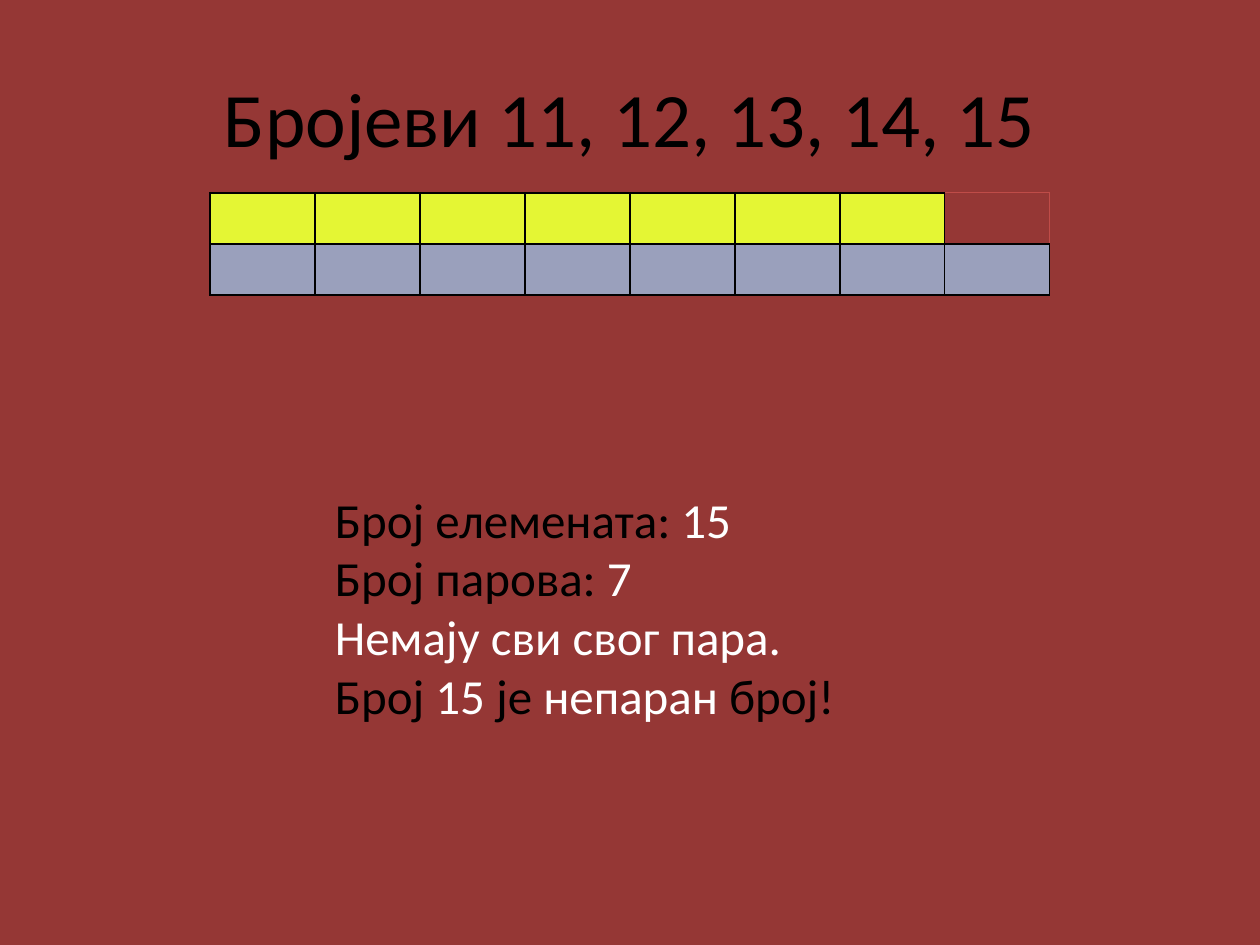
from lxml import etree
from pptx import Presentation
from pptx.dml.color import RGBColor
from pptx.enum.text import MSO_ANCHOR, PP_ALIGN
from pptx.oxml.ns import qn
from pptx.util import Inches, Pt

CENTER, LEFT = PP_ALIGN.CENTER, PP_ALIGN.LEFT
MIDDLE, TOP = MSO_ANCHOR.MIDDLE, MSO_ANCHOR.TOP

BRICK = RGBColor(0x95, 0x37, 0x35)
BLACK = RGBColor(0x00, 0x00, 0x00)
WHITE = RGBColor(0xFF, 0xFF, 0xFF)
YELLOW = RGBColor(0xE4, 0xF6, 0x34)
BLUE = RGBColor(0x9A, 0xA0, 0xBC)
FAINT_RED = RGBColor(0xBF, 0x4C, 0x48)

FONT = "Calibri"
WIDTH, HEIGHT = Inches(10), Inches(7.5)
PAIR_COLUMNS, PAIR_ROWS = 8, 2
BLACK_EDGE, FAINT_EDGE = (BLACK, 1), (FAINT_RED, 0.75)

TITLE = [[("Бројеви 11, 12, 13, 14, 15", BLACK)]]
FACTS = [
    [("Број елемената: ", BLACK), ("15", WHITE)],
    [("Број парова: ", BLACK), ("7", WHITE)],
    [("Немају сви свог пара.", WHITE)],
    [("Број ", BLACK), ("15 ", WHITE), ("је ", BLACK),
     ("непаран", WHITE), (" број!", BLACK)],
]


def share_box(left, top, width, height):
    return (round(WIDTH * left), round(HEIGHT * top),
            round(WIDTH * width), round(HEIGHT * height))


def add_text(slide, box, lines, size, alignment, anchor):
    text_frame = slide.shapes.add_textbox(*box).text_frame
    text_frame.word_wrap = True
    text_frame.vertical_anchor = anchor
    for index, line in enumerate(lines):
        paragraph = text_frame.add_paragraph() if index else text_frame.paragraphs[0]
        paragraph.alignment = alignment
        for text, color in line:
            run = paragraph.add_run()
            run.text = text
            run.font.name = FONT
            run.font.size = Pt(size)
            run.font.color.rgb = color


def style_cell(cell, color, edges):
    cell.fill.solid()
    cell.fill.fore_color.rgb = color
    properties = cell._tc.get_or_add_tcPr()
    for position, (side, (edge_color, width)) in enumerate(edges.items()):
        line = etree.Element(qn(f"a:ln{side}"), w=str(Pt(width)))
        fill = etree.SubElement(line, qn("a:solidFill"))
        etree.SubElement(fill, qn("a:srgbClr"), val=str(edge_color))
        properties.insert(position, line)


def add_pairs(slide, box):
    left, top, width, height = box
    table = slide.shapes.add_table(PAIR_ROWS, PAIR_COLUMNS, *box).table
    table.first_row = False
    table.horz_banding = False
    for column in table.columns:
        column.width = width // PAIR_COLUMNS
    for row in table.rows:
        row.height = height // PAIR_ROWS
    black_edges = dict.fromkeys("LRTB", BLACK_EDGE)
    for row, color in enumerate((YELLOW, BLUE)):
        for column in range(PAIR_COLUMNS):
            style_cell(table.cell(row, column), color, black_edges)


def add_missing_partner(slide):
    table = slide.shapes[-1].table
    cell = table.cell(0, PAIR_COLUMNS - 1)
    properties = cell._tc.get_or_add_tcPr()
    for child in list(properties):
        properties.remove(child)
    style_cell(cell, BRICK, {"L": BLACK_EDGE, "R": FAINT_EDGE,
                             "T": FAINT_EDGE, "B": BLACK_EDGE})


def main():
    presentation = Presentation()
    presentation.slide_width, presentation.slide_height = WIDTH, HEIGHT
    slide = presentation.slides.add_slide(presentation.slide_layouts[6])
    slide.background.fill.solid()
    slide.background.fill.fore_color.rgb = BRICK
    add_text(slide, share_box(0.05, 0.04, 0.9, 1 / 6), TITLE, 44, CENTER, MIDDLE)
    add_pairs(slide, share_box(1 / 6, 0.204, 2 / 3, 0.108))
    add_missing_partner(slide)
    add_text(slide, share_box(0.256, 0.511, 0.434, 0.265), FACTS, 28, LEFT, TOP)
    presentation.save("out.pptx")


if __name__ == "__main__":
    main()
